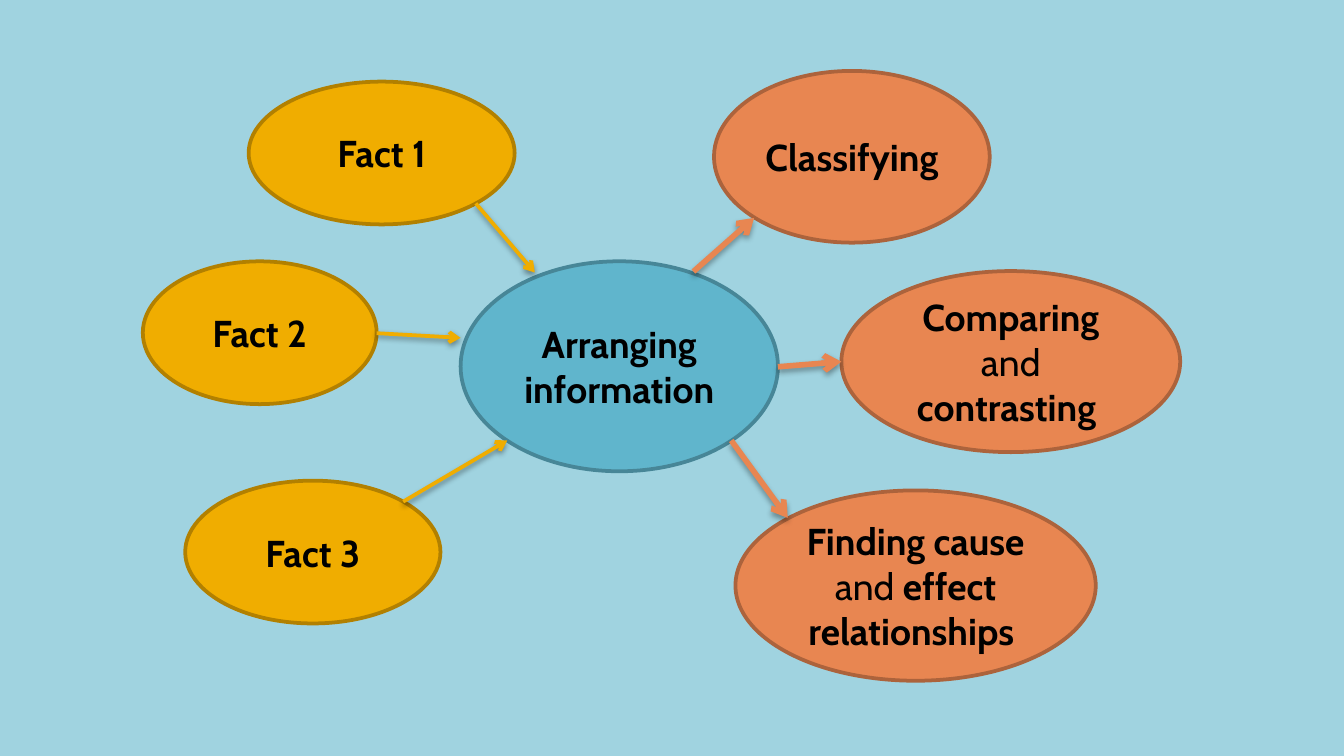
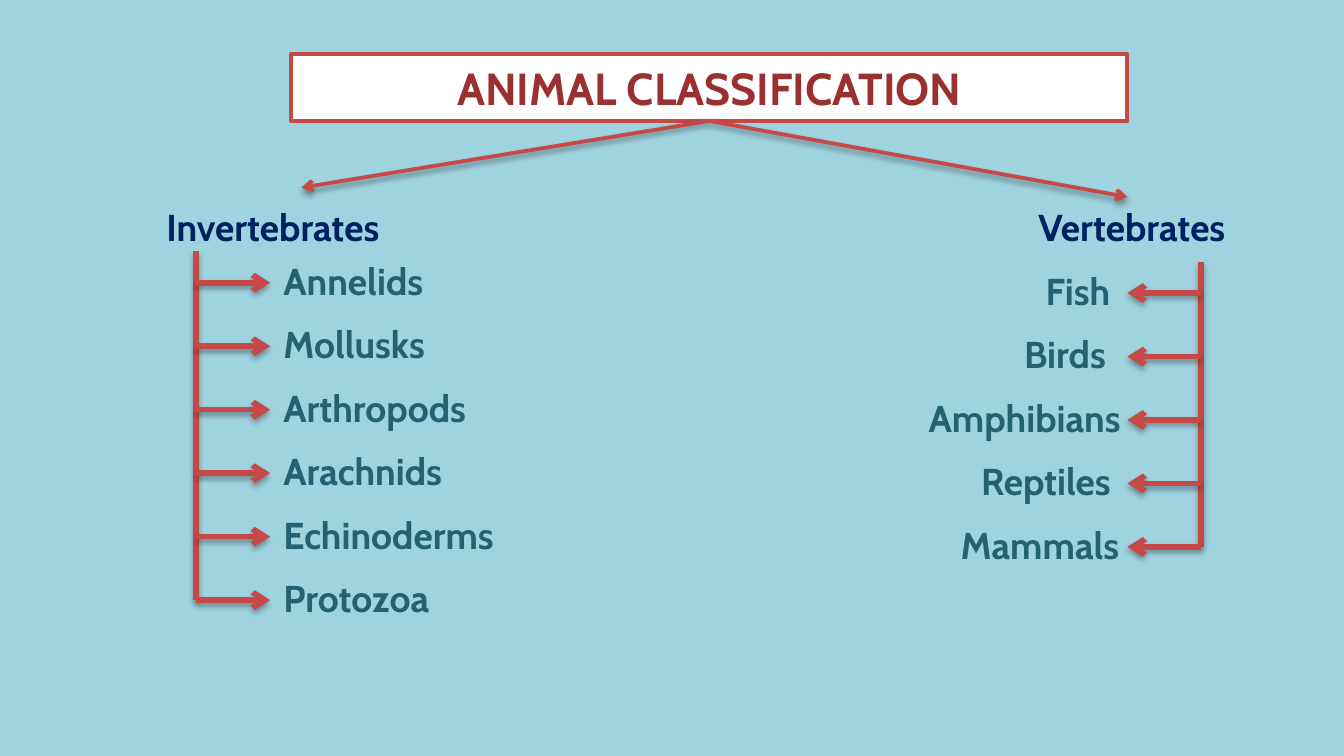
from lxml import etree
from pptx import Presentation
from pptx import util as u
from pptx.dml.color import RGBColor
from pptx.enum import shapes, text
from pptx.oxml import parse_xml
from pptx.oxml.ns import nsdecls, qn

Pt = u.Pt
FONT = "Cabin"
COLORS = {
    "background": "A0D3E0", "black": "000000", "white": "FFFFFF",
    "blue": "60B5CC", "blue edge": "478697",
    "gold": "F0AD00", "gold edge": "B28000",
    "orange": "E88651", "orange edge": "AC633C",
    "red": "C64847", "dark red": "9A3130",
    "navy": "002060", "teal": "246172",
}
RGB = {name: RGBColor.from_string(value) for name, value in COLORS.items()}


def write(frame, words, *, size=20, color="black", align=text.PP_ALIGN.LEFT,
          anchor=text.MSO_ANCHOR.TOP, fit=text.MSO_AUTO_SIZE.NONE):
    """Fill a text frame with one bold paragraph; parts between | marks are regular."""
    frame.word_wrap = True
    frame.auto_size = fit
    frame.vertical_anchor = anchor
    para = frame.paragraphs[0]
    para.alignment = align
    for index, part in enumerate(words.split("|")):
        span = para.add_run()
        span.text = part
        span.font.name = FONT
        span.font.size = Pt(size)
        span.font.bold = index % 2 == 0
        span.font.color.rgb = RGB[color]


def draw_line(page, start, end, color, width, arrow=True):
    """Draw a straight line with a soft shadow below it."""
    line = page.shapes.add_connector(
        shapes.MSO_CONNECTOR.STRAIGHT, *[Pt(value) for value in start + end])
    line.line.color.rgb = RGB[color]
    line.line.width = Pt(width)
    properties = line._element.spPr
    if arrow:
        etree.SubElement(properties.find(qn("a:ln")), qn("a:tailEnd"), type="arrow")
    distance, opacity = (1.6, 38) if width == 2 else (1.8, 35)
    properties.append(parse_xml(
        f'<a:effectLst {nsdecls("a")}>'
        f'<a:outerShdw blurRad="{Pt(3.1)}" dist="{Pt(distance)}" dir="5400000" rotWithShape="0">'
        f'<a:srgbClr val="{COLORS["black"]}"><a:alpha val="{opacity * 1000}"/></a:srgbClr>'
        '</a:outerShdw></a:effectLst>'))
    return line


deck = Presentation()
deck.slide_width, deck.slide_height = Pt(720), Pt(405)
background = deck.slide_master.background.fill
background.solid()
background.fore_color.rgb = RGB["background"]
title_only, blank = deck.slide_layouts[5], deck.slide_layouts[6]

# Facts are arranged, then used in three ways
page = deck.slides.add_slide(blank)
ovals = [
    ("Arranging information", "blue", 246.75, 140, 170, 112.5),
    ("Fact 1", "gold", 133.2, 43.75, 142.5, 76.5),
    ("Fact 2", "gold", 76.5, 140, 125.25, 76.5),
    ("Fact 3", "gold", 99.25, 257.5, 136.75, 76.5),
    ("Classifying ", "orange", 382.5, 38, 147.75, 92),
    ("Comparing |and |contrasting ", "orange", 450.75, 145.25, 181.5, 97),
    ("Finding cause |and| effect relationships ", "orange", 394, 262.75, 193, 102),
]
for words, color, left, top, width, height in ovals:
    oval = page.shapes.add_shape(
        shapes.MSO_SHAPE.OVAL, Pt(left), Pt(top), Pt(width), Pt(height))
    oval.shadow.inherit = False
    oval.fill.solid()
    oval.fill.fore_color.rgb = RGB[color]
    oval.line.color.rgb = RGB[color + " edge"]
    oval.line.width = Pt(2)
    frame = oval.text_frame
    frame.margin_left = frame.margin_right = Pt(5)
    frame.margin_top = frame.margin_bottom = Pt(3)
    write(frame, words, align=text.PP_ALIGN.CENTER, anchor=text.MSO_ANCHOR.MIDDLE)

for start, end in [((254.9, 109), (286.5, 146)),
                   ((201.75, 178.5), (246.75, 181)),
                   ((216, 268.75), (271.75, 236))]:
    draw_line(page, start, end, "gold", 2)
for start, end in [((371.5, 145.5), (404, 116.75)),
                   ((416.75, 196.5), (450.75, 193.75)),
                   ((391.75, 236), (422, 277.5))]:
    draw_line(page, start, end, "orange", 3)

# Animal classification tree
page = deck.slides.add_slide(title_only)
title = page.shapes.title
title.left, title.top, title.width, title.height = Pt(156), Pt(28.8), Pt(448), Pt(36)
title.fill.solid()
title.fill.fore_color.rgb = RGB["white"]
title.line.color.rgb = RGB["red"]
title.line.width = Pt(2)
write(title.text_frame, "ANIMAL CLASSIFICATION", size=24, color="dark red",
      align=text.PP_ALIGN.CENTER, anchor=text.MSO_ANCHOR.MIDDLE)
for tip in [(161.5, 100.5), (604, 105.5)]:
    branch = draw_line(page, (380, 64.8), tip, "red", 2)
    branch.begin_connect(title, 2)

ROW_STEP, LABEL_HEIGHT = 34, 31.5
# Each group: heading, its left, width and alignment, trunk x, trunk top,
# first row y, arrow tip x, and (name, left, width) of its members
groups = [
    ("Invertebrates", 82.1, 170, text.PP_ALIGN.LEFT, 105, 134.75, 151.5, 144.75,
     [("Annelids", 144.75, 91), ("Mollusks", 144.75, 91), ("Arthropods", 144.75, 113),
      ("Arachnids", 144.75, 102), ("Echinoderms", 144.75, 142), ("Protozoa", 144.75, 96.5)]),
    ("Vertebrates", 541.4, 130, text.PP_ALIGN.CENTER, 643.5, 140.5, 157, 604,
     [("Fish", 553, 51), ("Birds", 541.5, 62.5), ("Amphibians", 490.4, 119),
      ("Reptiles", 518.5, 85.5), ("Mammals", 507.6, 102)]),
]
for (heading, left, width, align, trunk, trunk_top, first_row, tip, members) in groups:
    box = page.shapes.add_textbox(Pt(left), Pt(105.8), Pt(width), Pt(LABEL_HEIGHT))
    write(box.text_frame, heading, color="navy", align=align,
          fit=text.MSO_AUTO_SIZE.SHAPE_TO_FIT_TEXT)
    last_row = first_row + ROW_STEP * (len(members) - 1)
    draw_line(page, (trunk, trunk_top), (trunk, last_row), "red", 3, arrow=False)
    for row, (name, left, width) in enumerate(members):
        middle = first_row + ROW_STEP * row
        box = page.shapes.add_textbox(
            Pt(left), Pt(middle - LABEL_HEIGHT / 2), Pt(width), Pt(LABEL_HEIGHT))
        box.text_frame.margin_top, box.text_frame.margin_bottom = Pt(2.4), Pt(4.8)
        write(box.text_frame, name, color="teal", fit=text.MSO_AUTO_SIZE.SHAPE_TO_FIT_TEXT)
        pointer = draw_line(page, (trunk, middle), (tip, middle), "red", 3)
        if left == tip:
            pointer.end_connect(box, 1)
        elif left + width == tip:
            pointer.end_connect(box, 3)

deck.save("out.pptx")
